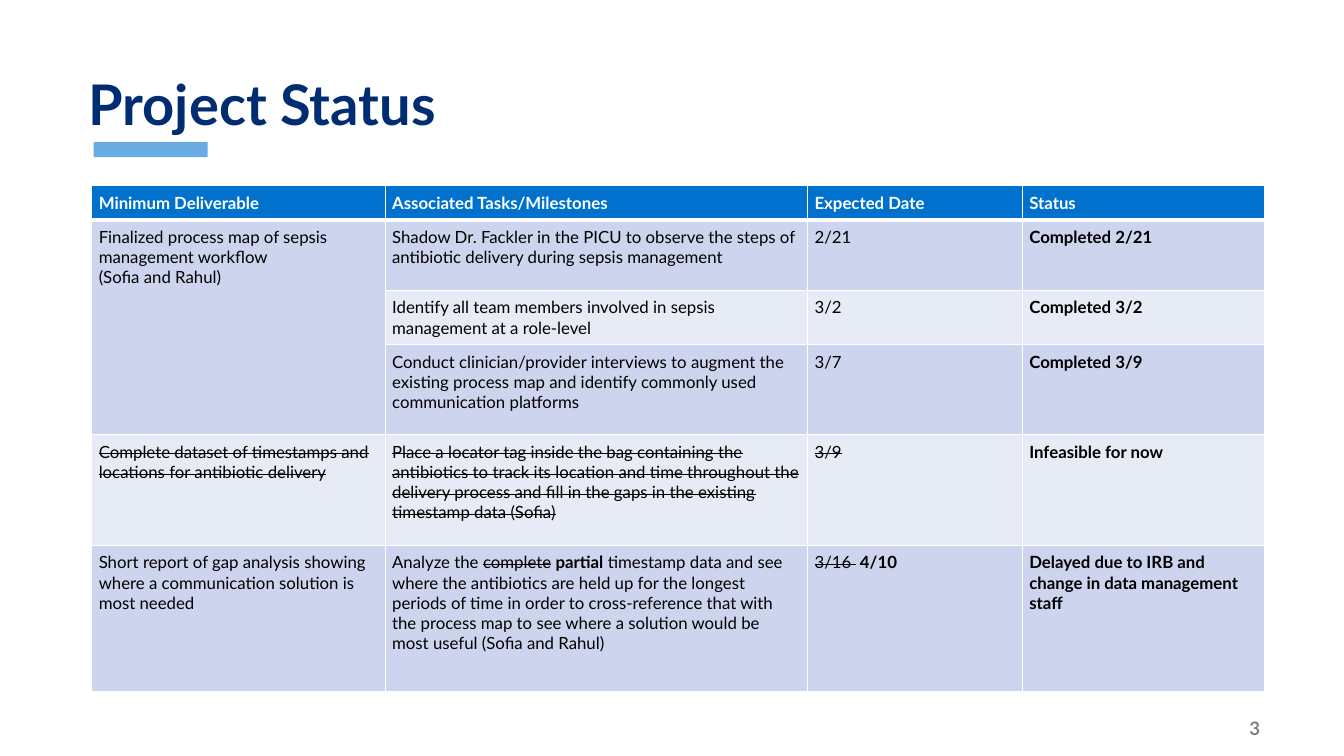
import pptx
import pptx.dml.color
import pptx.enum.shapes
import pptx.enum.text
import pptx.oxml
import pptx.oxml.ns
import pptx.util

PX = 9144  # EMU; 100 px to the inch
FONT = "Lato"
ANCHOR = pptx.enum.text.MSO_ANCHOR
ALIGN = pptx.enum.text.PP_ALIGN

COLS = [291, 419, 213, 240]
ROWS = [34, 70, 51, 89, 110, 145]
BANDS = ["CCD5ED", "E7EBF6"]
HEAD = ["Minimum Deliverable", "Associated Tasks/Milestones", "Expected Date", "Status"]

# A cell is a list of paragraphs, a paragraph a list of (text, style) runs:
# "b" is bold, "s" is struck through.
TASKS = [
    [
        [[("Finalized process map of sepsis management workflow", "")],
         [("(Sofia and Rahul)", "")]],
        [[("Shadow Dr. Fackler in the PICU to observe the steps of antibiotic "
           "delivery during sepsis management", "")]],
        [[("2/21", "")]],
        [[("Completed 2/21", "b")]],
    ],
    [
        None,
        [[("Identify all team members involved in sepsis management at a "
           "role-level", "")]],
        [[("3/2", "")]],
        [[("Completed 3/2", "b")]],
    ],
    [
        None,
        [[("Conduct clinician/provider interviews to augment the existing process "
           "map and identify commonly used communication platforms", "")]],
        [[("3/7", "")]],
        [[("Completed 3/9", "b")]],
    ],
    [
        [[("Complete dataset of timestamps and locations for antibiotic "
           "delivery", "s")]],
        [[("Place a locator tag inside the bag containing the antibiotics to track "
           "its location and time throughout the delivery process and fill in the "
           "gaps in the existing timestamp data (Sofia)", "s")]],
        [[("3/9", "s")]],
        [[("Infeasible for now", "b")]],
    ],
    [
        [[("Short report of gap analysis showing where a communication solution is "
           "most needed", "")]],
        [[("Analyze the ", ""), ("complete", "s"), (" ", ""), ("partial", "b"),
          (" timestamp data and see where the antibiotics are held up for the "
           "longest periods of time in order to cross-reference that with the "
           "process map to see where a solution would be most useful "
           "(Sofia and Rahul)", "")]],
        [[("3/16 ", "s"), (" ", ""), ("4/10", "b")]],
        [[("Delayed due to IRB and change in data management staff", "b")]],
    ],
]


def rgb(code):
    return pptx.dml.color.RGBColor.from_string(code)


def paint(fill, code):
    fill.solid()
    fill.fore_color.rgb = rgb(code)


def style(para, size, code):
    para.font.name = FONT
    para.font.size = pptx.util.Pt(size)
    para.font.color.rgb = rgb(code)


def write(frame, paras, size, code):
    for i, runs in enumerate(paras):
        para = frame.add_paragraph() if i else frame.paragraphs[0]
        style(para, size, code)
        for text, mark in runs:
            run = para.add_run()
            run.text = text
            run.font.bold = mark == "b"
            if mark == "s":
                run._r.get_or_add_rPr().set("strike", "sngStrike")


def label(slide, box, text, size, code, anchor, align):
    """Add a one-line bold text box."""
    shape = slide.shapes.add_textbox(*[n * PX for n in box])
    frame = shape.text_frame
    frame.word_wrap = True
    frame.vertical_anchor = anchor
    write(frame, [[(text, "b")]], size, code)
    frame.paragraphs[0].alignment = align
    return frame


def heading(slide, x, y, w, h):
    bar = slide.shapes.add_shape(
        pptx.enum.shapes.MSO_SHAPE.RECTANGLE,
        (x + 15) * PX, (y + h) * PX, 113 * PX, 15 * PX)
    bar.shadow.inherit = False
    paint(bar.fill, "69ACE5")
    bar.line.fill.background()
    frame = label(slide, (x, y, w, h), "Project Status", 40, "002D72",
                  ANCHOR.BOTTOM, ALIGN.LEFT)
    frame.paragraphs[0].line_spacing = 0.9


def footer(slide, x, y, w, h):
    frame = label(slide, (x, y, w, h), "3", 13.3, "808080",
                  ANCHOR.MIDDLE, ALIGN.RIGHT)
    frame.margin_right = 17 * PX


def border(cell, top, bottom):
    """Give a cell white edges, with top and bottom widths in points."""
    props = cell._tc.get_or_add_tcPr()
    space = pptx.oxml.ns.nsdecls("a")
    for side, width in (("L", 1), ("R", 1), ("T", top), ("B", bottom)):
        props.append(pptx.oxml.parse_xml(
            f'<a:ln{side} {space} w="{width * 12700}"><a:solidFill>'
            f'<a:srgbClr val="FFFFFF"/></a:solidFill></a:ln{side}>'))


def status(slide, x, y):
    """Add the table of deliverables."""
    grid = slide.shapes.add_table(
        len(ROWS), len(COLS), x * PX, y * PX, sum(COLS) * PX, sum(ROWS) * PX).table
    grid.horz_banding = False
    for col, width in zip(grid.columns, COLS):
        col.width = width * PX
    for row, height in zip(grid.rows, ROWS):
        row.height = height * PX
    head = [[[(text, "b")]] for text in HEAD]
    for r, line in enumerate([head] + TASKS):
        for c, paras in enumerate(line):
            cell = grid.cell(r, c)
            cell.margin_left = cell.margin_right = 7 * PX
            cell.margin_top = cell.margin_bottom = 7 * PX
            border(cell, 3 if r == 1 else 1, 3 if r == 0 else 1)
            paint(cell.fill, BANDS[(r - 1) % 2] if r else "0072CE")
            if paras:
                write(cell.text_frame, paras, 12, "000000" if r else "FFFFFF")
    grid.cell(1, 0).merge(grid.cell(3, 0))


def main():
    deck = pptx.Presentation()
    deck.slide_width = 1333 * PX
    deck.slide_height = 750 * PX
    slide = deck.slides.add_slide(deck.slide_layouts[6])
    heading(slide, 78, 16, 1189, 125)
    status(slide, 91, 184)
    footer(slide, 1151, 709, 116, 26)
    deck.save("out.pptx")


if __name__ == "__main__":
    main()
